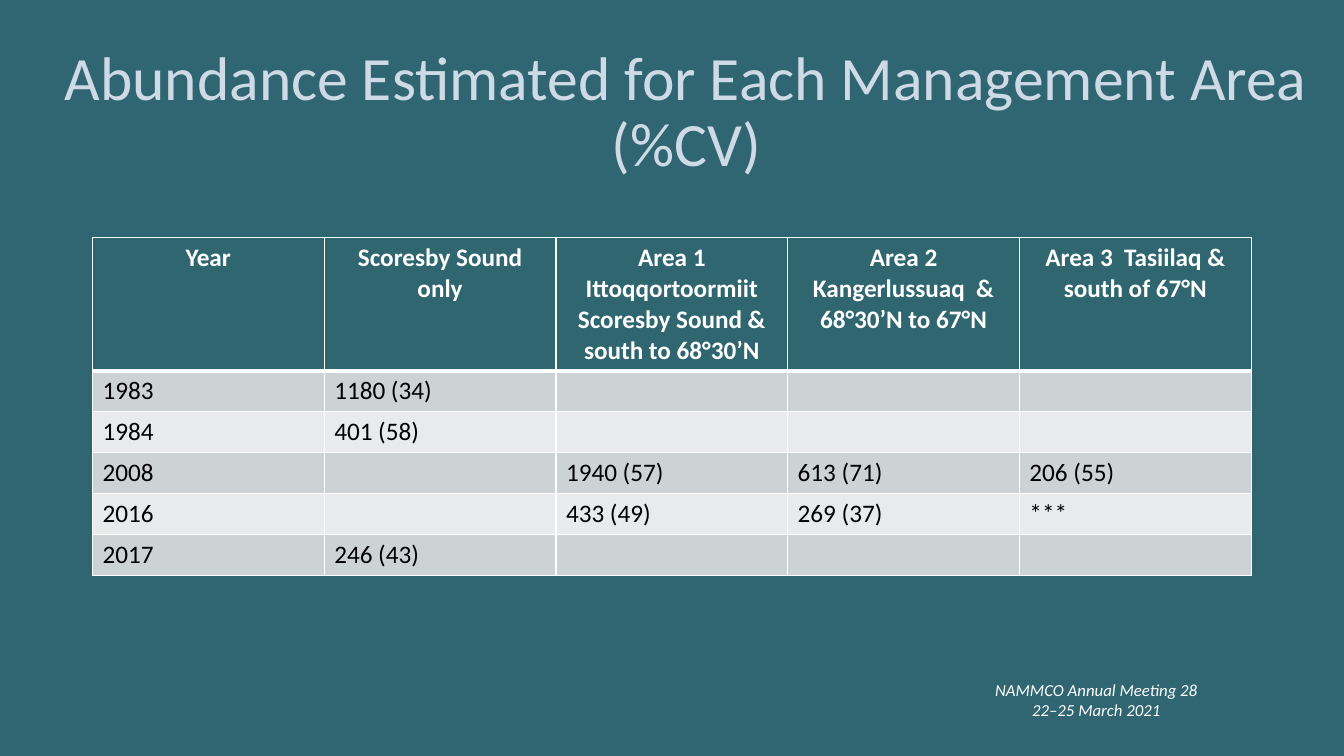
from dataclasses import dataclass
from lxml import etree
from pptx import Presentation
from pptx.dml.color import RGBColor
from pptx.enum.text import MSO_ANCHOR, MSO_AUTO_SIZE, PP_ALIGN
from pptx.oxml.ns import qn
from pptx.util import Cm, Pt

CENTER, LEFT = PP_ALIGN.CENTER, PP_ALIGN.LEFT
MIDDLE = MSO_ANCHOR.MIDDLE
NO_AUTOFIT = MSO_AUTO_SIZE.NONE


@dataclass(frozen=True)
class Theme:
    font: str = "Calibri"
    background: str = "306672"
    title: str = "CEDBE6"
    header: str = "306670"
    bands: tuple = ("CDD3D5", "E8EAEB")
    white: str = "FFFFFF"
    black: str = "000000"
    title_size: int = 44
    table_size: int = 18
    footer_size: int = 12
    thin_border: int = 1
    thick_border: int = 3


theme = Theme()


def format_text(paragraph, size, color, alignment, bold=False, italic=False):
    paragraph.alignment = alignment
    values = {"name": theme.font, "size": Pt(size), "bold": bold, "italic": italic}
    for name, value in values.items():
        setattr(paragraph.font, name, value)
    paragraph.font.color.rgb = RGBColor.from_string(color)


def set_borders(cell, widths):
    properties = cell._tc.get_or_add_tcPr()
    for index, (side, width) in enumerate(widths.items()):
        line = etree.Element(qn(f"a:{side}"), w=str(Pt(width)))
        fill = etree.SubElement(line, qn("a:solidFill"))
        etree.SubElement(fill, qn("a:srgbClr"), val=theme.white)
        properties.insert(index, line)


presentation = Presentation()
presentation.slide_width = Cm(33.87)
presentation.slide_height = Cm(19.05)
slide = presentation.slides.add_slide(presentation.slide_layouts[5])
slide.background.fill.solid()
slide.background.fill.fore_color.rgb = RGBColor.from_string(theme.background)

title = slide.shapes.title
title_box = {"left": Cm(0.74), "top": Cm(1.02), "width": Cm(33.12), "height": Cm(3.68)}
for name, value in title_box.items():
    setattr(title, name, value)
title.text_frame.text = "Abundance Estimated for Each Management Area (%CV)"
title.text_frame.auto_size = NO_AUTOFIT
title.text_frame.vertical_anchor = MIDDLE
title_paragraph = title.text_frame.paragraphs[0]
title_paragraph.line_spacing = 0.9
format_text(title_paragraph, theme.title_size, theme.title, CENTER)

abundance = [
    ["Year", "Scoresby Sound only",
     "Area 1 Ittoqqortoormiit Scoresby Sound & south to 68°30’N",
     "Area 2 Kangerlussuaq  & 68°30’N to 67°N",
     "Area 3  Tasiilaq & south of 67°N"],
    ["1983", "1180 (34)", "", "", ""],
    ["1984", "401 (58)", "", "", ""],
    ["2008", "", "1940 (57)", "613 (71)", "206 (55)"],
    ["2016", "", "433 (49)", "269 (37)", "***"],
    ["2017", "246 (43)", "", "", ""],
]
header_height, row_height, column_width = Cm(3.35), Cm(1.03), Cm(5.84)
row_count, column_count = len(abundance), len(abundance[0])
table = slide.shapes.add_table(
    row_count, column_count, Cm(2.33), Cm(5.99),
    column_width * column_count, header_height + row_height * (row_count - 1),
).table
for column in table.columns:
    column.width = column_width

for row_index, values in enumerate(abundance):
    is_header = row_index == 0
    table.rows[row_index].height = header_height if is_header else row_height
    fill_color = theme.header if is_header else theme.bands[(row_index - 1) % 2]
    text_color = theme.white if is_header else theme.black
    alignment = CENTER if is_header else LEFT
    borders = dict.fromkeys(("lnL", "lnR", "lnT", "lnB"), theme.thin_border)
    if is_header:
        borders["lnB"] = theme.thick_border
    elif row_index == 1:
        borders["lnT"] = theme.thick_border
    for column_index, value in enumerate(values):
        cell = table.cell(row_index, column_index)
        cell.text = value
        cell.fill.solid()
        cell.fill.fore_color.rgb = RGBColor.from_string(fill_color)
        format_text(cell.text_frame.paragraphs[0], theme.table_size, text_color,
                    alignment, bold=is_header)
        set_borders(cell, borders)

footer = slide.shapes.add_textbox(Cm(24.71), Cm(17.12), Cm(5.84), Cm(1.02))
footer.text_frame.word_wrap = True
footer.text_frame.vertical_anchor = MIDDLE
footer.text_frame.text = "NAMMCO Annual Meeting 28\n22–25 March 2021"
for paragraph in footer.text_frame.paragraphs:
    format_text(paragraph, theme.footer_size, theme.white, CENTER, italic=True)

presentation.save("out.pptx")
